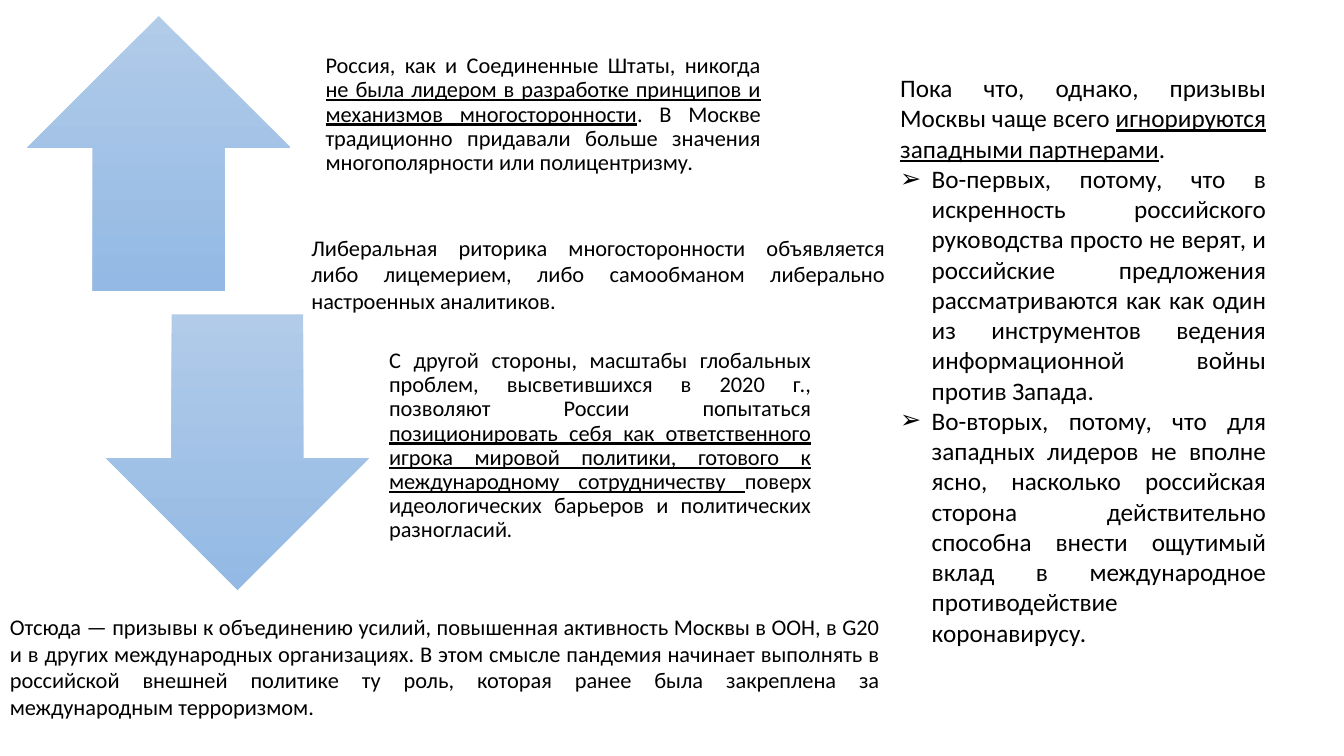
from dataclasses import dataclass
from typing import NamedTuple

from lxml import etree
from pptx import Presentation
from pptx.dml.color import RGBColor
from pptx.enum.shapes import MSO_SHAPE
from pptx.enum.text import MSO_ANCHOR, MSO_AUTO_SIZE, PP_ALIGN
from pptx.oxml.ns import qn
from pptx.util import Pt

UP_ARROW, DOWN_ARROW = MSO_SHAPE.UP_ARROW, MSO_SHAPE.DOWN_ARROW
TOP, MIDDLE = MSO_ANCHOR.TOP, MSO_ANCHOR.MIDDLE
JUSTIFY = PP_ALIGN.JUSTIFY
NO_AUTOFIT = MSO_AUTO_SIZE.NONE


@dataclass(frozen=True)
class Theme:
    """Colours, fonts and type sizes of the slide."""
    ink: RGBColor = RGBColor(0, 0, 0)
    arrow_top: RGBColor = RGBColor.from_string("B1CBE9")
    arrow_bottom: RGBColor = RGBColor.from_string("93B9E4")
    font: str = "Calibri"
    serif: str = "Cambria"
    text_size: int = 16
    list_size: int = 18


class Box(NamedTuple):
    """A region measured in points."""
    left: float
    top: float
    width: float
    height: float

    def lengths(self):
        """Return the four measures as lengths."""
        return [Pt(value) for value in self]


class Run(NamedTuple):
    """A piece of text with its own format."""
    text: str
    underline: bool = False
    font: str = ""


THEME = Theme()
ARROW_WIDTH = 188
LIST_INDENT = 22.5

RUSSIA_AND_LEADERSHIP = [
    Run("Россия, как и Соединенные Штаты, никогда "),
    Run("не была лидером в разработке принципов и механизмов многосторонности", True),
    Run(". В Москве традиционно придавали больше значения многополярности "
        "или полицентризму. "),
]
GLOBAL_PROBLEMS = [
    Run("С другой стороны, масштабы глобальных проблем, высветившихся в 2020 г., "
        "позволяют России попытаться "),
    Run("позиционировать себя как ответственного игрока мировой политики, готового "
        "к международному сотрудничеству ", True),
    Run("поверх идеологических барьеров и политических разногласий"),
    Run(".", font=THEME.serif),
]
LIBERAL_RHETORIC = [
    Run("Либеральная риторика многосторонности объявляется либо лицемерием, либо "
        "самообманом либерально настроенных аналитиков."),
]
CALLS_TO_UNITE = [
    Run("Отсюда — призывы к объединению усилий, повышенная активность Москвы в ООН, "
        "в G20 и в других международных организациях. В этом смысле пандемия начинает "
        "выполнять в российской внешней политике ту роль, которая ранее была закреплена "
        "за международным терроризмом. "),
]
PARTNERS_IGNORE = [
    Run("Пока что, однако, призывы Москвы чаще всего "),
    Run("игнорируются западными партнерами", True),
    Run(". "),
]
REASONS = [
    [Run("Во-первых, потому, что в искренность российского руководства просто не верят, "
         "и российские предложения рассматриваются как как один из инструментов ведения "
         "информационной войны против Запада. ")],
    [Run("Во-вторых, потому, что для западных лидеров не вполне ясно, насколько "
         "российская сторона действительно способна внести ощутимый вклад в "
         "международное противодействие коронавирусу.")],
]


def write(paragraph, runs, size=THEME.text_size, spacing=1.0, bullet=""):
    """Fill a justified paragraph with formatted runs."""
    paragraph.alignment = JUSTIFY
    paragraph.line_spacing = spacing
    paragraph.space_before = paragraph.space_after = Pt(0)
    properties = paragraph._p.get_or_add_pPr()
    indent = Pt(LIST_INDENT) if bullet else 0
    properties.set("marL", str(indent))
    properties.set("indent", str(-indent))
    if bullet:
        etree.SubElement(properties, qn("a:buChar")).set("char", bullet)
    else:
        etree.SubElement(properties, qn("a:buNone"))
    for piece in runs:
        run = paragraph.add_run()
        run.text = piece.text
        run.font.name = piece.font or THEME.font
        run.font.size = Pt(size)
        run.font.underline = piece.underline
        run.font.color.rgb = THEME.ink


def set_frame(frame, anchor=TOP, insets=(7.2, 3.6, 7.2, 3.6)):
    """Set wrapping, anchor and insets of a text frame."""
    frame.word_wrap = True
    frame.auto_size = NO_AUTOFIT
    frame.vertical_anchor = anchor
    (frame.margin_left, frame.margin_top,
     frame.margin_right, frame.margin_bottom) = map(Pt, insets)


def add_note(slide, box, runs):
    """Add a plain justified paragraph."""
    frame = slide.shapes.add_textbox(*box.lengths()).text_frame
    set_frame(frame)
    write(frame.paragraphs[0], runs)


def add_argument(slide, box, direction, runs, gap, text_top=0, bottom_inset=8.64):
    """Add a gradient arrow with its argument to the right."""
    arrow = slide.shapes.add_shape(
        direction, *box._replace(width=ARROW_WIDTH).lengths())
    arrow.shadow.inherit = False
    arrow.line.fill.background()
    arrow.fill.gradient()
    arrow.fill.gradient_angle = 270
    for stop, color in zip(arrow.fill.gradient_stops,
                           (THEME.arrow_top, THEME.arrow_bottom)):
        stop.color.rgb = color
    offset = ARROW_WIDTH + gap
    text_box = Box(box.left + offset, box.top + text_top,
                   box.width - offset, box.height - text_top)
    frame = slide.shapes.add_textbox(*text_box.lengths()).text_frame
    set_frame(frame, MIDDLE, (8.64, 0, 8.64, bottom_inset))
    write(frame.paragraphs[0], runs, spacing=0.9)


def add_reasons(slide, box, lead, reasons):
    """Place the lead sentence and the list of reasons in the body."""
    body = slide.placeholders[1]
    body.left, body.top, body.width, body.height = box.lengths()
    frame = body.text_frame
    set_frame(frame)
    write(frame.paragraphs[0], lead, size=THEME.list_size)
    for reason in reasons:
        write(frame.add_paragraph(), reason, size=THEME.list_size, bullet="➢")


def main():
    """Build and save the slide."""
    deck = Presentation()
    deck.slide_width, deck.slide_height = Pt(960), Pt(540)
    slide = deck.slides.add_slide(deck.slide_layouts[1])
    title = slide.shapes.title.element
    title.getparent().remove(title)
    add_argument(slide, Box(19.4, 11.5, 532.8, 196.6), UP_ARROW,
                 RUSSIA_AND_LEADERSHIP, gap=16.5, text_top=5, bottom_inset=60.6)
    add_argument(slide, Box(75.6, 224.6, 512.6, 196.6), DOWN_ARROW,
                 GLOBAL_PROBLEMS, gap=5.7)
    add_note(slide, Box(215.3, 163.4, 424.1, 65.5), LIBERAL_RHETORIC)
    add_note(slide, Box(0, 434.2, 635.8, 85), CALLS_TO_UNITE)
    add_reasons(slide, Box(635.8, 48.2, 275.8, 443.5), PARTNERS_IGNORE, REASONS)
    deck.save("out.pptx")


if __name__ == "__main__":
    main()
